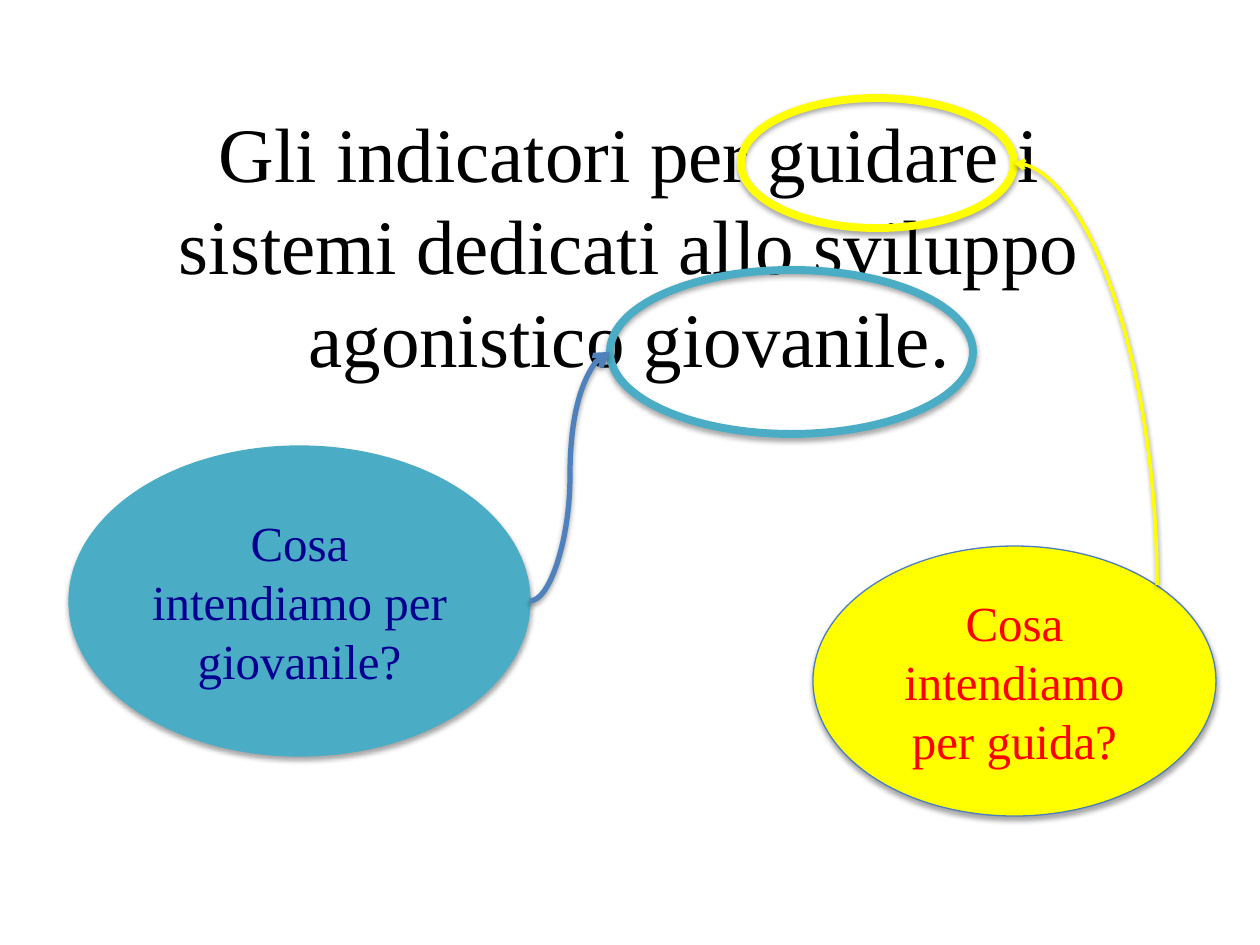
from dataclasses import dataclass
from typing import Optional

from lxml import etree
from pptx import Presentation
from pptx import util as u
from pptx.dml.color import RGBColor
from pptx.enum import shapes, text
from pptx.oxml import ns

PX = 914400 / 126


@dataclass(frozen=True)
class Theme:
    font: str = "Times New Roman"
    title_size: int = 44
    question_size: int = 28
    black: str = "000000"
    yellow: str = "FFFF00"
    red: str = "FF0000"
    teal: str = "4BACC6"
    blue: str = "4F81BD"
    outline: str = "4B7EBC"
    navy: str = "000090"


@dataclass(frozen=True)
class Oval:
    left: int
    top: int
    width: int
    height: int
    line: str
    weight: float
    fill: Optional[str] = None
    label: str = ""
    ink: str = ""


@dataclass(frozen=True)
class Arrow:
    x1: int
    y1: int
    x2: int
    y2: int
    color: str
    weight: float
    quarter: bool = False


@dataclass(frozen=True)
class Callout:
    question: Oval
    ring: Oval
    arrow: Arrow


T = Theme()
TITLE = "Gli indicatori per guidare i sistemi dedicati allo sviluppo agonistico giovanile."
CALLOUTS = (
    Callout(
        Oval(813, 546, 403, 270, T.outline, 0.75, T.yellow, "Cosa intendiamo per guida?", T.red),
        Oval(741, 98, 273, 130, T.yellow, 4.5),
        Arrow(1157, 585, 1014, 163, T.yellow, 2, quarter=True),
    ),
    Callout(
        Oval(69, 446, 461, 310, T.teal, 0.75, T.teal, "Cosa intendiamo per giovanile?", T.navy),
        Oval(610, 270, 363, 164, T.teal, 4.5),
        Arrow(530, 601, 610, 352, T.blue, 3),
    ),
)


def px(n: float) -> u.Emu:
    return u.Emu(round(n * PX))


def rgb(color: str) -> RGBColor:
    return RGBColor.from_string(color)


def add_shadow(sp, opacity: int, distance: float) -> None:
    """Give the shape a soft shadow that falls straight down."""
    spPr = sp._element.spPr
    effects = spPr.find(ns.qn("a:effectLst"))
    if effects is None:
        effects = etree.SubElement(spPr, ns.qn("a:effectLst"))
    shadow = etree.SubElement(
        effects, ns.qn("a:outerShdw"), blurRad=str(u.Pt(3.1)),
        dist=str(u.Pt(distance)), dir="5400000", rotWithShape="0")
    color = etree.SubElement(shadow, ns.qn("a:srgbClr"), val=T.black)
    etree.SubElement(color, ns.qn("a:alpha"), val=str(opacity * 1000))


def write(sp, words: str, size: int, color: str) -> None:
    tf = sp.text_frame
    tf.word_wrap = True
    tf.vertical_anchor = text.MSO_ANCHOR.MIDDLE
    tf.text = words
    p = tf.paragraphs[0]
    p.alignment = text.PP_ALIGN.CENTER
    font = p.runs[0].font
    font.name, font.size = T.font, u.Pt(size)
    font.color.rgb = rgb(color)


def draw_oval(group, o: Oval) -> None:
    sp = group.shapes.add_shape(
        shapes.MSO_SHAPE.OVAL, px(o.left), px(o.top), px(o.width), px(o.height))
    sp.shadow.inherit = False
    if o.fill:
        sp.fill.solid()
        sp.fill.fore_color.rgb = rgb(o.fill)
    else:
        sp.fill.background()
    sp.line.color.rgb = rgb(o.line)
    sp.line.width = u.Pt(o.weight)
    add_shadow(sp, 35, 1.8)
    if o.label:
        write(sp, o.label, T.question_size, o.ink)


def draw_arrow(group, a: Arrow) -> None:
    """Draw an S-curve, or a quarter curve that leaves upwards when a.quarter is set."""
    x1, y1, x2, y2 = a.x1, a.y1, a.x2, a.y2
    if a.quarter:
        # The frame lies on its side about the same centre, then turns by 270 degrees.
        cx, cy = (x1 + x2) / 2, (y1 + y2) / 2
        dx, dy = (y1 - y2) / 2, (x1 - x2) / 2
        x1, y1, x2, y2 = cx - dx, cy + dy, cx + dx, cy - dy
    cn = group.shapes.add_connector(
        shapes.MSO_CONNECTOR.CURVE, px(x1), px(y1), px(x2), px(y2))
    if a.quarter:
        spPr = cn._element.spPr
        spPr.find(ns.qn("a:xfrm")).set("rot", str(270 * 60000))
        spPr.find(ns.qn("a:prstGeom")).set("prst", "curvedConnector2")
    cn.line.color.rgb = rgb(a.color)
    cn.line.width = u.Pt(a.weight)
    etree.SubElement(cn.line._get_or_add_ln(), ns.qn("a:tailEnd"), type="arrow")
    add_shadow(cn, 38, 1.6)


def main() -> None:
    prs = Presentation()
    prs.slide_width, prs.slide_height = px(1260), px(945)
    s = prs.slides.add_slide(prs.slide_layouts[6])
    title = s.shapes.add_textbox(px(94), px(72), px(1071), px(344))
    write(title, TITLE, T.title_size, T.black)
    for callout in CALLOUTS:
        group = s.shapes.add_group_shape()
        draw_oval(group, callout.question)
        draw_oval(group, callout.ring)
        draw_arrow(group, callout.arrow)
    prs.save("out.pptx")


if __name__ == "__main__":
    main()
